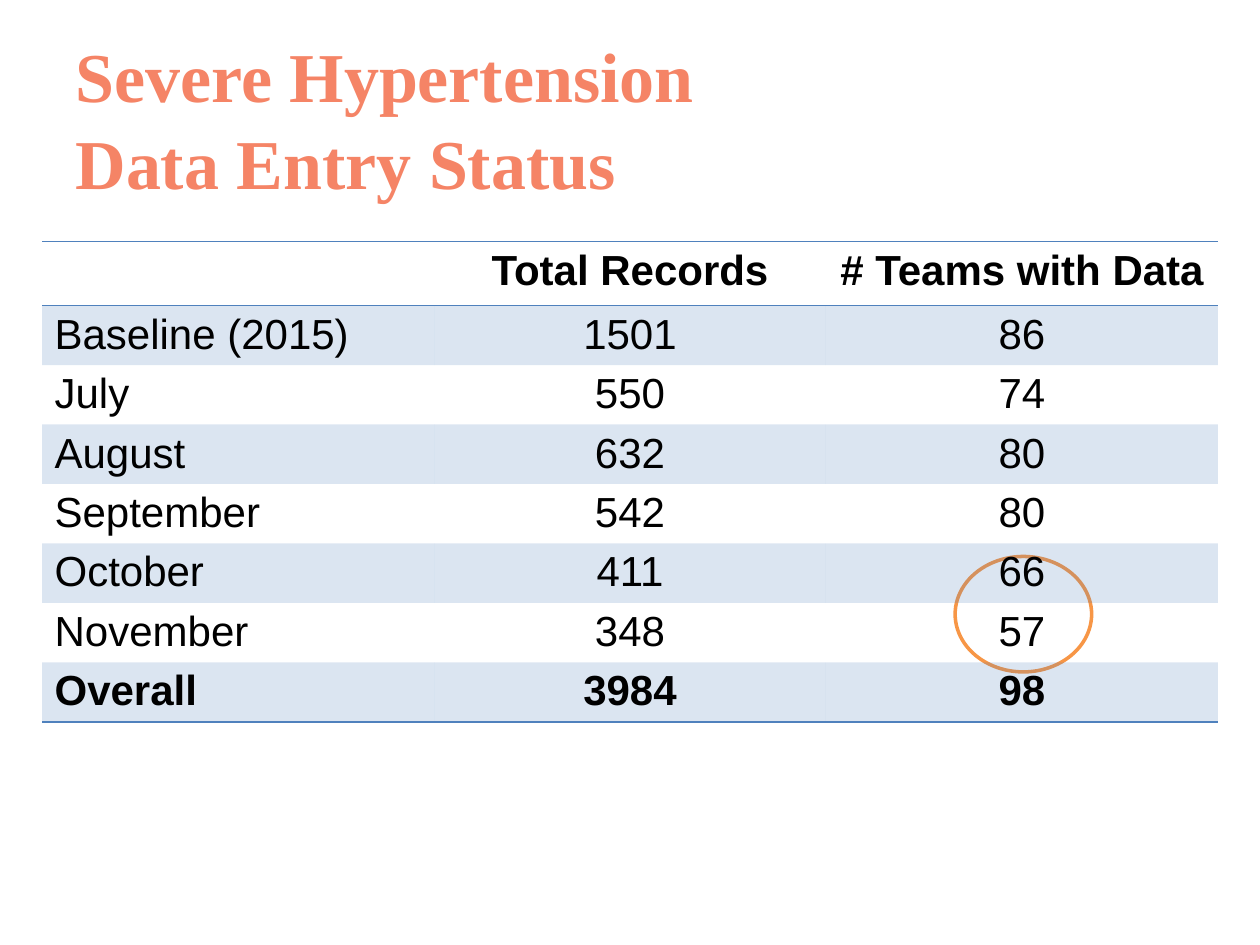
"""Build the data entry status slide."""
import pptx
import pptx.chart.data
import pptx.dml.color
import pptx.enum.shapes
import pptx.enum.text
import pptx.oxml
import pptx.util

Pt = pptx.util.Pt
ALIGN = pptx.enum.text.PP_ALIGN
ANCHOR = pptx.enum.text.MSO_ANCHOR
NS = 'xmlns:a="http://schemas.openxmlformats.org/drawingml/2006/main"'

HEX = {"title": "F58466", "text": "000000", "blue": "4F81BD",
       "ring": "F79646", "white": "FFFFFF"}
TITLE = "Severe Hypertension\vData Entry Status"
ROWS = [
    ("", "Total Records", "# Teams with Data"),
    ("Baseline (2015)", "1501", "86"),
    ("July", "550", "74"),
    ("August", "632", "80"),
    ("September", "542", "80"),
    ("October", "411", "66"),
    ("November", "348", "57"),
    ("Overall", "3984", "98"),
]
LEFT, TOP, WIDTH = 24, 138, 672
HEAD, ROW = 36.6, 34
PLAIN = "{2D5ABB26-0587-4C30-8999-92F81FD0307C}"


def color(name):
    return pptx.dml.color.RGBColor.from_string(HEX[name])


def write(frame, text, font="Arial", size=24, tint="text", bold=False,
          align=ALIGN.LEFT, space=None):
    frame.text = text
    para = frame.paragraphs[0]
    para.alignment = align
    para.line_spacing = space
    for run in para.runs:
        run.font.name = font
        run.font.size = Pt(size)
        run.font.bold = bold
        run.font.color.rgb = color(tint)


def border(cell, sides):
    for side in sides:
        cell._tc.get_or_add_tcPr().append(pptx.oxml.parse_xml(
            f'<a:ln{side} {NS} w="{Pt(1)}"><a:solidFill>'
            f'<a:srgbClr val="{HEX["blue"]}"/></a:solidFill></a:ln{side}>'))


def shade(cell, part):
    cell.fill.solid()
    cell.fill.fore_color.rgb = color("blue")
    tone = cell._tc.tcPr.find(".//{*}solidFill[last()]/{*}srgbClr")
    for tone in cell._tc.tcPr.findall("{*}solidFill/{*}srgbClr"):
        tone.append(pptx.oxml.parse_xml(
            f'<a:alpha {NS} val="{part * 1000}"/>'))


def add_title(slide):
    title = slide.shapes.title
    title.left, title.top = Pt(36), Pt(21.6)
    title.width, title.height = Pt(648), Pt(90)
    title.text_frame.vertical_anchor = ANCHOR.MIDDLE
    write(title.text_frame, TITLE, font="Times New Roman", size=40,
          tint="title", bold=True, space=1.04)


def add_ring(slide):
    ring = slide.shapes.add_shape(
        pptx.enum.shapes.MSO_SHAPE.OVAL,
        Pt(545.8), Pt(318), Pt(78), Pt(66))
    ring.shadow.inherit = False
    ring.fill.solid()
    ring.fill.fore_color.rgb = color("white")
    ring.line.color.rgb = color("ring")
    ring.line.width = Pt(2)


def add_grid(slide):
    last = len(ROWS) - 1
    frame = slide.shapes.add_table(
        len(ROWS), len(ROWS[0]), Pt(LEFT), Pt(TOP), Pt(WIDTH),
        Pt(HEAD + ROW * last))
    grid = frame.table
    grid.first_row = grid.horz_banding = False
    grid._tbl.tblPr.find("{*}tableStyleId").text = PLAIN
    for r, row in enumerate(ROWS):
        grid.rows[r].height = Pt(ROW if r else HEAD)
        for c, text in enumerate(row):
            cell = grid.cell(r, c)
            cell.margin_top = cell.margin_bottom = Pt(3.2)
            write(cell.text_frame, text, bold=r in (0, last),
                  align=ALIGN.CENTER if c else ALIGN.LEFT)
            border(cell, {0: "TB", last: "B"}.get(r, ""))
            if r % 2:
                shade(cell, 20)
            else:
                cell.fill.background()


def main():
    deck = pptx.Presentation()
    deck.slide_width, deck.slide_height = Pt(720), Pt(540)
    slide = deck.slides.add_slide(deck.slide_layouts[5])
    add_title(slide)
    add_ring(slide)
    add_grid(slide)
    deck.save("out.pptx")


if __name__ == "__main__":
    main()
